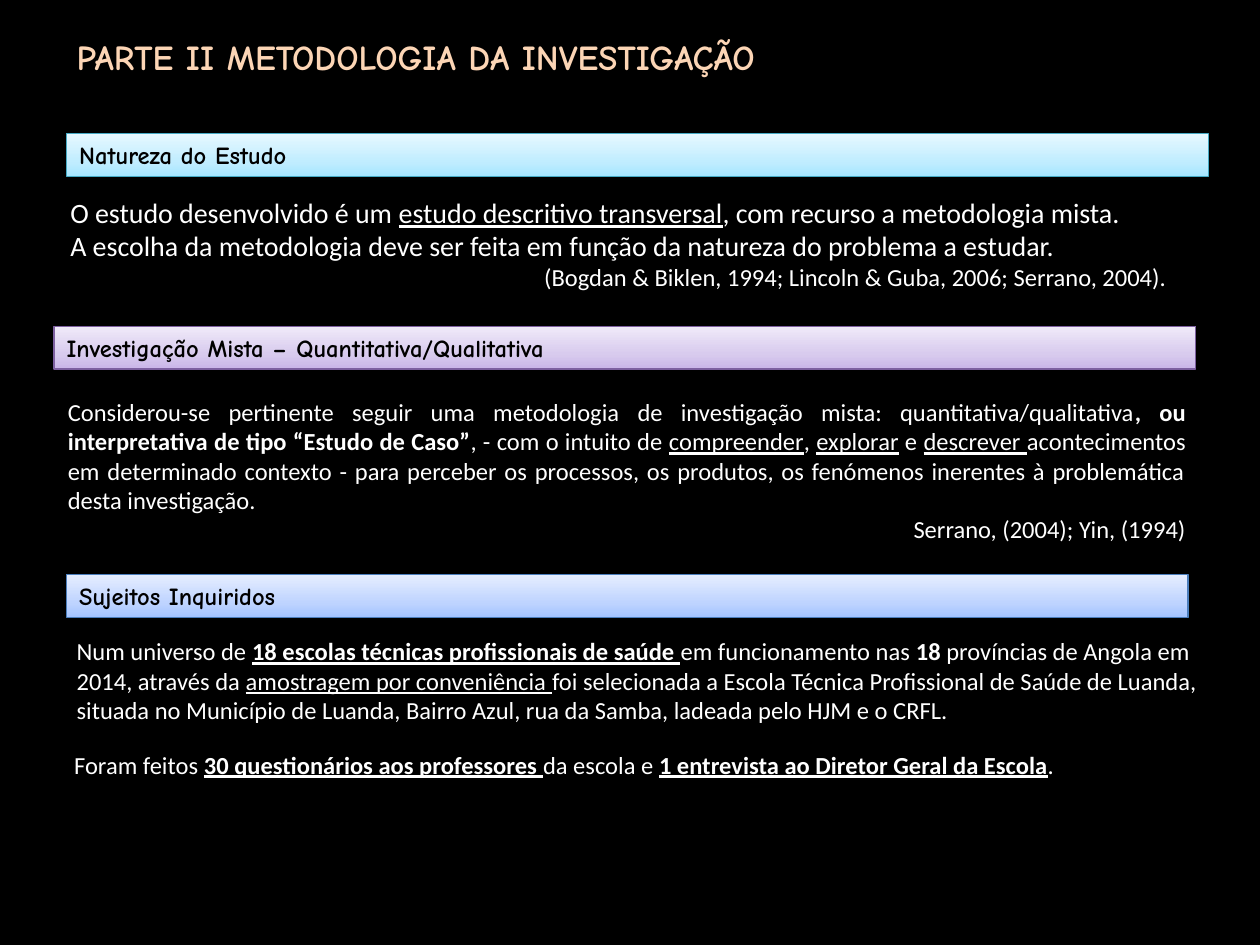
import copy

import pptx
import pptx.dml.color
import pptx.enum.shapes
import pptx.enum.text
import pptx.oxml.ns
import pptx.util

COLUMNS, ROWS = 100, 75
WIDTH, HEIGHT = pptx.util.Inches(10), pptx.util.Inches(7.5)
HEADING_FONT, BODY_FONT = "Comic Neue", "Calibri"
ALIGN = pptx.enum.text.PP_ALIGN

BANDS = [
    ((5.3, 10.6, 90.6, 3.4), "Natureza do Estudo", ("A7E6FF", "C1EDFF", "E7F8FF"), "46AAC5"),
    ((4.3, 25.9, 90.6, 3.4), "Investigação Mista – Quantitativa/Qualitativa",
     ("C9B5E8", "D8CBEE", "F0EAF9"), "7D60A0"),
    ((5.3, 45.6, 89, 3.4), "Sujeitos Inquiridos", ("A4C4FF", "BFD4FF", "E6EEFF"), "4B7EBC"),
]

BODIES = [
    ((4.6, 15, 89, 8.8), [
        (ALIGN.JUSTIFY, 16, [
            ("O estudo desenvolvido é um ", ""),
            ("estudo descritivo transversal", "u"),
            (", com recurso a metodologia mista.", ""),
        ]),
        (ALIGN.JUSTIFY, 16, [
            ("A escolha da metodologia deve ser feita em função da natureza do problema a estudar.", ""),
        ]),
        (ALIGN.RIGHT, 14, [("(Bogdan & Biklen, 1994; Lincoln & Guba, 2006; Serrano, 2004).", "")]),
    ]),
    ((4.4, 31, 90.7, 12.8), [
        (ALIGN.JUSTIFY, 14, [
            ("Considerou-se pertinente seguir uma metodologia de investigação mista: "
             "quantitativa/qualitativa", ""),
            (", ou interpretativa de tipo “Estudo de Caso”", "b"),
            (", - com o intuito de ", ""),
            ("compreender", "u"),
            (", ", ""),
            ("explorar", "u"),
            (" e ", ""),
            ("descrever ", "u"),
            ("acontecimentos em determinado contexto - para perceber os processos, os produtos, "
             "os fenómenos inerentes à problemática desta investigação.", ""),
        ]),
        (ALIGN.RIGHT, 14, [("Serrano, (2004); Yin, (1994)", "")]),
    ]),
    ((5.1, 50, 91.4, 8.1), [
        (ALIGN.LEFT, 14, [
            ("Num universo de ", ""),
            ("18 escolas técnicas profissionais de saúde ", "bu"),
            ("em funcionamento nas ", ""),
            ("18", "b"),
            (" províncias de Angola em 2014, através da ", ""),
            ("amostragem por conveniência ", "u"),
            ("foi selecionada a Escola Técnica Profissional de Saúde de Luanda, situada no Município "
             "de Luanda, Bairro Azul, rua da Samba, ladeada pelo HJM e o CRFL.", ""),
        ]),
    ]),
    ((4.9, 59, 92.7, 3.4), [
        (ALIGN.LEFT, 14, [
            ("Foram feitos ", ""),
            ("30 questionários aos professores ", "bu"),
            ("da escola e ", ""),
            ("1 entrevista ao Diretor Geral da Escola", "bu"),
            (".", ""),
        ]),
    ]),
]


def color(value):
    return pptx.dml.color.RGBColor.from_string(value)


def place(cell):
    left, top, width, height = cell
    return (int(WIDTH * left / COLUMNS), int(HEIGHT * top / ROWS),
            int(WIDTH * width / COLUMNS), int(HEIGHT * height / ROWS))


def add_run(paragraph, text, style, size, font_name, font_color):
    run = paragraph.add_run()
    run.text = text
    run.font.name = font_name
    run.font.size = pptx.util.Pt(size)
    run.font.bold = "b" in style
    run.font.underline = "u" in style
    run.font.color.rgb = color(font_color)


def add_text(slide, cell, paragraphs, font_name=BODY_FONT, font_color="FFFFFF"):
    shape = slide.shapes.add_textbox(*place(cell))
    frame = shape.text_frame
    frame.word_wrap = True
    for index, (alignment, size, runs) in enumerate(paragraphs):
        paragraph = frame.add_paragraph() if index else frame.paragraphs[0]
        paragraph.alignment = alignment
        for text, style in runs:
            add_run(paragraph, text, style, size, font_name, font_color)
    return shape


def fill_gradient(shape, colors):
    shape.fill.gradient()
    shape.fill.gradient_angle = 90
    stop_list = shape.element.spPr.find(".//" + pptx.oxml.ns.qn("a:gsLst"))
    stop_list.append(copy.deepcopy(stop_list[-1]))
    for stop, position, value in zip(shape.fill.gradient_stops, (0, 0.35, 1), colors):
        stop.position = position
        stop.color.rgb = color(value)


def add_band(slide, cell, text, colors, line_color):
    shape = slide.shapes.add_shape(pptx.enum.shapes.MSO_SHAPE.RECTANGLE, *place(cell))
    shape.shadow.inherit = False
    fill_gradient(shape, colors)
    shape.line.color.rgb = color(line_color)
    shape.line.width = pptx.util.Pt(0.75)
    shape.text_frame.word_wrap = True
    shape.text_frame.vertical_anchor = pptx.enum.text.MSO_ANCHOR.TOP
    paragraph = shape.text_frame.paragraphs[0]
    paragraph.alignment = ALIGN.LEFT
    add_run(paragraph, text, "b", 14, HEADING_FONT, "000000")


def main():
    presentation = pptx.Presentation()
    presentation.slide_width, presentation.slide_height = WIDTH, HEIGHT
    slide = presentation.slides.add_slide(presentation.slide_layouts[6])
    slide.background.fill.solid()
    slide.background.fill.fore_color.rgb = color("000000")

    title = [(ALIGN.LEFT, 20, [("PARTE II METODOLOGIA DA INVESTIGAÇÃO", "b")])]
    title_box = add_text(slide, (5.1, 2.9, 90, 3.1), title, HEADING_FONT, "FCD5B5")
    title_box.text_frame.vertical_anchor = pptx.enum.text.MSO_ANCHOR.MIDDLE
    for band in BANDS:
        add_band(slide, *band)
    for cell, paragraphs in BODIES:
        add_text(slide, cell, paragraphs)
    presentation.save("out.pptx")


if __name__ == "__main__":
    main()
